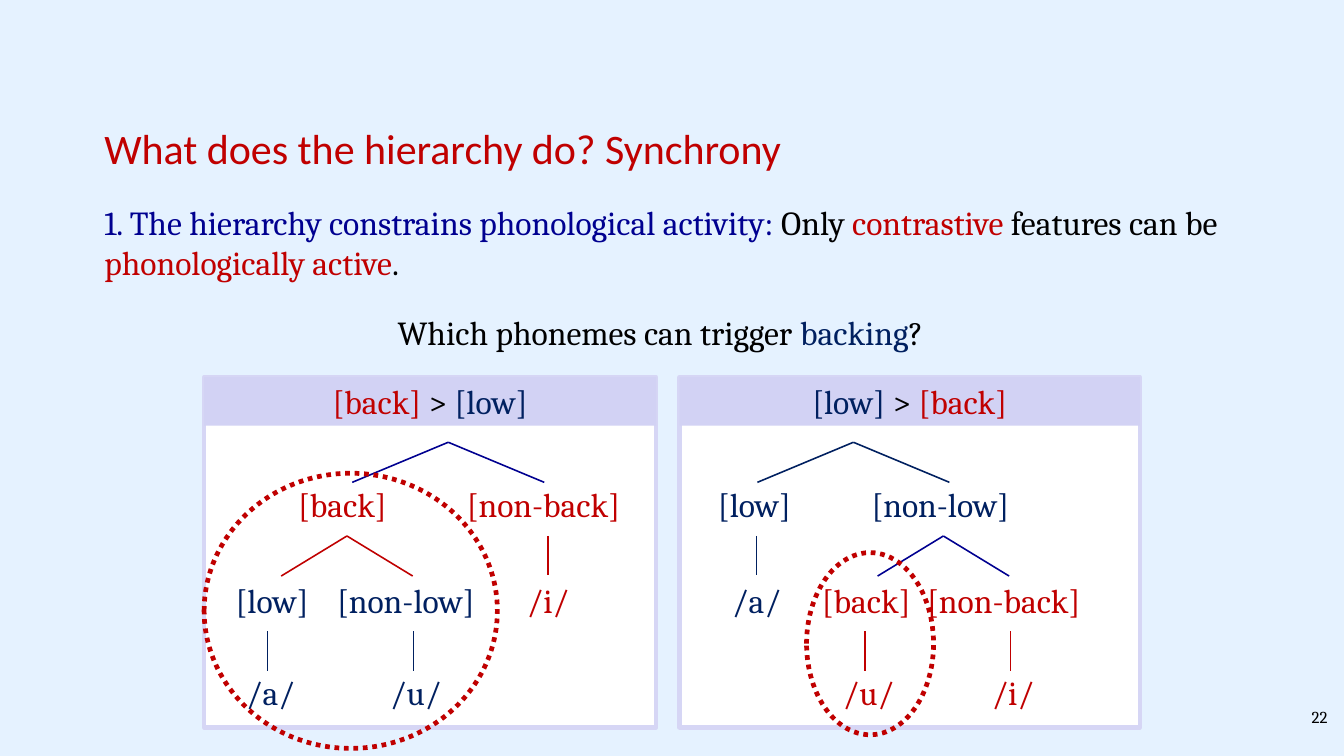
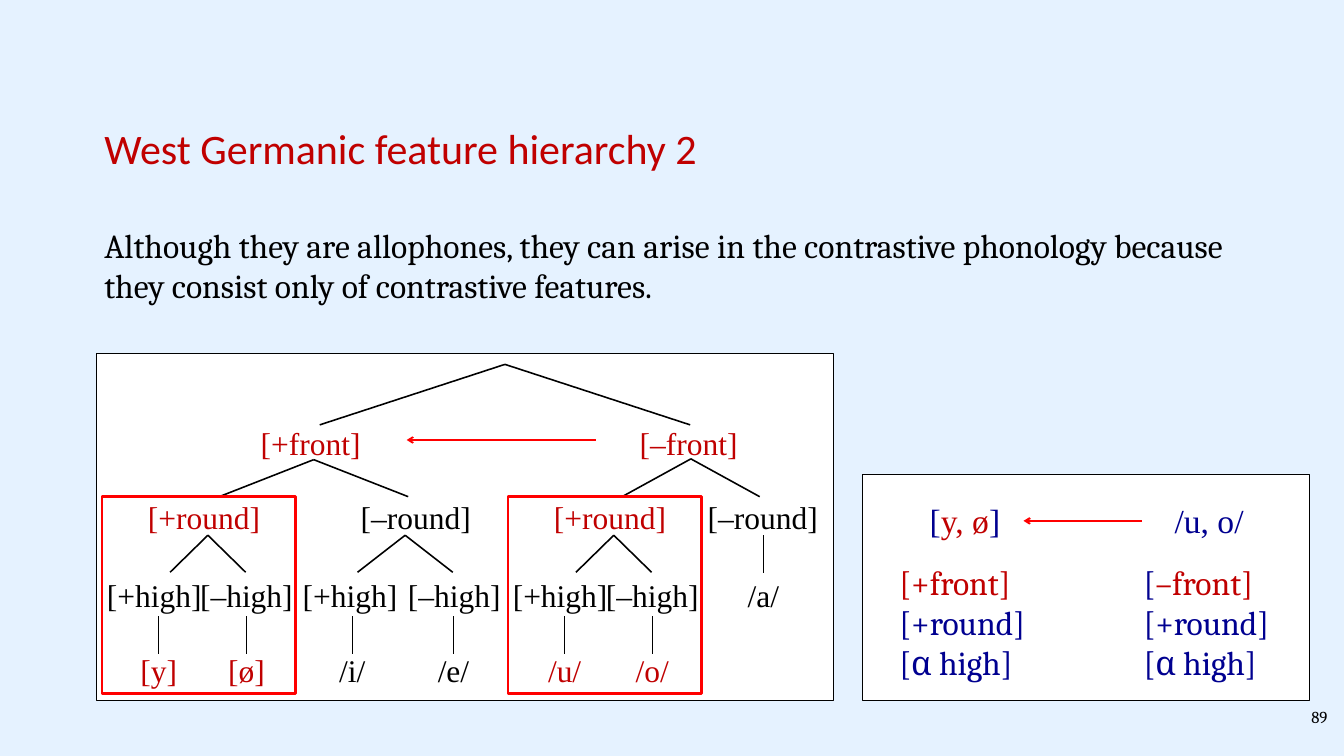
from lxml.etree import SubElement
from pptx import Presentation
from pptx.dml.color import RGBColor
from pptx.enum.dml import MSO_LINE
from pptx.enum.shapes import MSO_CONNECTOR, MSO_SHAPE
from pptx.enum.text import MSO_ANCHOR, MSO_AUTO_SIZE, PP_ALIGN
from pptx.oxml.ns import qn
from pptx.util import Inches, Pt

BACKGROUND, WHITE, BLACK = "E5F2FF", "FFFFFF", "000000"
RED, BRIGHT_RED, BLUE, NAVY = "C00000", "FF0000", "000090", "002060"
BORDER, BAND = "D6D6F5", "D2D2F4"
TITLE_FONT, TEXT_FONT, TREE_FONT = "Calibri", "Cambria", "Times New Roman"

LABEL_WIDTHS = {
    "[back]": 1.42, "[non-back]": 2.33, "[low]": 1.22, "[non-low]": 2.14,
    "[+front]": 1.54, "[–front]": 1.51, "[+round]": 1.7, "[–round]": 1.67,
    "[+high]": 1.47, "[–high]": 1.44,
}
LEAF_WIDTH = 1.0


def color(value):
    return RGBColor.from_string(value)


def write(box, paragraphs, size=32, font=TEXT_FONT, align=PP_ALIGN.LEFT, wrap=True):
    """Fill a shape with paragraphs, each a list of (text, colour) spans."""
    frame = box.text_frame
    frame.auto_size = MSO_AUTO_SIZE.NONE if wrap else MSO_AUTO_SIZE.SHAPE_TO_FIT_TEXT
    frame.word_wrap = wrap
    frame.vertical_anchor = MSO_ANCHOR.TOP
    for number, spans in enumerate(paragraphs):
        para = frame.paragraphs[0] if number == 0 else frame.add_paragraph()
        para.alignment = align
        para.space_before = Pt(0)
        for text, tint in spans:
            span = para.add_run()
            span.text = text
            span.font.size = Pt(size)
            span.font.name = font
            span.font.color.rgb = color(tint)


def place(box, left, top, width, height):
    box.left, box.top = Inches(left), Inches(top)
    box.width, box.height = Inches(width), Inches(height)


def add_text(page, left, top, width, height, paragraphs, **style):
    box = page.shapes.add_textbox(
        Inches(left), Inches(top), Inches(width), Inches(height))
    write(box, paragraphs, **style)


def add_outline(page, left, top, width, height, fill=None, line=None, weight=1.0,
                kind=MSO_SHAPE.RECTANGLE):
    shape = page.shapes.add_shape(
        kind, Inches(left), Inches(top), Inches(width), Inches(height))
    shape.shadow.inherit = False
    if fill:
        shape.fill.solid()
        shape.fill.fore_color.rgb = color(fill)
    else:
        shape.fill.background()
    if line:
        shape.line.color.rgb = color(line)
        shape.line.width = Pt(weight)
    else:
        shape.line.fill.background()
    return shape


def add_line(page, start, end, tint, weight, arrow=False):
    line = page.shapes.add_connector(
        MSO_CONNECTOR.STRAIGHT, *(Inches(length) for length in (*start, *end)))
    line.line.color.rgb = color(tint)
    line.line.width = Pt(weight)
    if arrow:
        SubElement(line.line._get_or_add_ln(), qn("a:tailEnd"), type="arrow")
    SubElement(line._element.spPr, qn("a:effectLst"))


def add_branch(page, apex, top, reach, drop, tint):
    for side in (-1, 1):
        add_line(page, (apex, top), (apex + side * reach, top + drop), tint, 1.5)


def add_label(page, center, top, text, tint, size, font):
    width = LABEL_WIDTHS.get(text, LEAF_WIDTH)
    add_text(page, center - width / 2, top, width, size * 0.02, [[(text, tint)]],
             size=size, font=font, align=PP_ALIGN.CENTER, wrap=False)


def start_page(deck, title, body_top, body, number):
    page = deck.slides.add_slide(deck.slide_layouts[1])
    heading, text = page.shapes.title, page.placeholders[1]
    place(heading, 1.28, 1.57, 9.69, 0.77)
    write(heading, [[(title, RED)]], size=40, font=TITLE_FONT)
    place(text, 1.28, body_top, 15.75, 1.18)
    write(text, [body])
    properties = text.text_frame.paragraphs[0]._p.get_or_add_pPr()
    properties.set("marL", "0")
    properties.set("indent", "0")
    SubElement(properties, qn("a:buNone"))
    add_text(page, 15.58, 9.3, 2.08, 0.5, [[(number, BLACK)]],
             size=16, align=PP_ALIGN.RIGHT)
    return page


def add_ranking_panel(page, left, top, width, heading, branches, labels, leaves, ring):
    """Draw one feature ranking: heading band, tree and dotted ring."""
    label_rows, line_rows = (1.36, 2.63, 3.85), (0.86, 2.1, 3.36)
    add_outline(page, left, top, width, 4.63, WHITE, BORDER, 4.5)
    for apex, row, reach, tint in branches:
        add_branch(page, left + apex, top + line_rows[row], reach, 0.53, tint)
    for text, center, row, tint in labels:
        add_label(page, left + center, top + label_rows[row], text, tint, 32, TEXT_FONT)
    for text, center, stem, row, tint in leaves:
        stem_top = top + line_rows[row]
        add_line(page, (left + stem, stem_top), (left + stem, stem_top + 0.52), tint, 1.5)
        add_label(page, left + center, top + label_rows[row], text, tint, 32, TEXT_FONT)
    band = add_outline(page, left, top, width, 0.64, BAND)
    write(band, [heading], align=PP_ALIGN.CENTER)
    ring_left, ring_top, ring_width, ring_height = ring
    circle = add_outline(page, left + ring_left, top + ring_top, ring_width, ring_height,
                         line=RED, weight=4.5, kind=MSO_SHAPE.OVAL)
    circle.line.dash_style = MSO_LINE.ROUND_DOT


def build_synchrony_page(deck):
    page = start_page(deck, "What does the hierarchy do? Synchrony", 2.62, [
        ("1. The hierarchy constrains phonological activity: ", BLUE), ("Only ", BLACK),
        ("contrastive", RED), (" features can be ", BLACK),
        ("phonologically active", RED), (".", BLACK)], "22")
    add_text(page, 4.38, 4.08, 8.71, 0.64, [[
        ("Which phonemes can trigger ", BLACK), ("backing", NAVY), ("?", BLACK)]],
        align=PP_ALIGN.CENTER)
    add_ranking_panel(
        page, 2.7, 4.99, 5.98,
        heading=[("[back] ", RED), ("> ", BLACK), ("[low]", NAVY)],
        branches=[(3.23, 0, 1.27, BLUE), (1.89, 1, 0.87, RED)],
        labels=[("[back]", 1.83, 0, RED), ("[non-back]", 4.49, 0, RED),
                ("[low]", 0.9, 1, NAVY), ("[non-low]", 2.67, 1, NAVY)],
        leaves=[("/i/", 4.55, 4.55, 1, RED), ("/a/", 0.88, 0.84, 2, NAVY),
                ("/u/", 2.8, 2.77, 2, NAVY)],
        ring=(0, 1.27, 3.88, 3.64))
    add_ranking_panel(
        page, 8.99, 4.99, 6.09,
        heading=[("[low] ", NAVY), ("> ", BLACK), ("[back]", RED)],
        branches=[(2.3, 0, 1.27, NAVY), (3.49, 1, 0.87, BLUE)],
        labels=[("[low]", 0.99, 0, NAVY), ("[non-low]", 3.45, 0, NAVY),
                ("[back]", 2.47, 1, RED), ("[non-back]", 4.29, 1, RED)],
        leaves=[("/a/", 1.02, 1.02, 1, NAVY), ("/u/", 2.5, 2.45, 2, RED),
                ("/i/", 4.41, 4.38, 2, RED)],
        ring=(1.68, 2.32, 1.68, 2.41))


def add_hierarchy_tree(page, left, top):
    front_row, round_row, high_row, vowel_row = 0.89, 1.87, 2.9, 3.89
    round_lines, high_lines = 2.41, 3.48

    def label(text, center, row, tint=BLACK):
        add_label(page, left + center, top + row, text, tint, 30, TREE_FONT)

    def leaf(text, center, row, stem_row, tint=BLACK):
        stem_top = top + stem_row
        add_line(page, (left + center, stem_top), (left + center, stem_top + 0.5),
                 BLACK, 0.75)
        label(text, center, row, tint)

    add_outline(page, left, top, 9.75, 4.6, WHITE, BLACK, 0.75)
    for apex, branch_top, reach, drop in (
            (5.4, 0.15, 2.45, 0.8), (2.87, 1.41, 1.25, 0.49), (7.86, 1.4, 0.91, 0.5),
            (4.08, round_lines, 0.63, 0.49)):
        add_branch(page, left + apex, top + branch_top, reach, drop, BLACK)
    label("[+front]", 2.83, front_row, RED)
    label("[–front]", 7.83, front_row, RED)
    add_line(page, (left + 6.6, top + 1.15), (left + 4.1, top + 1.15),
             BRIGHT_RED, 1.75, arrow=True)

    for frame_left, vowels in ((0.07, ("[y]", "[ø]")), (5.44, ("/u/", "/o/"))):
        add_branch(page, left + frame_left + 1.4, top + round_lines, 0.5, 0.49, BLACK)
        label("[+round]", frame_left + 1.35, round_row, RED)
        for height, center in (("[+high]", 0.69), ("[–high]", 1.91)):
            label(height, frame_left + center, high_row)
        for vowel, center in zip(vowels, (0.75, 1.91)):
            leaf(vowel, frame_left + center, vowel_row, high_lines, RED)
        add_outline(page, left + frame_left, top + 1.9, 2.56, 2.6,
                    line=BRIGHT_RED, weight=2.5)

    label("[–round]", 4.22, round_row)
    label("[–round]", 8.81, round_row)
    label("[+high]", 3.35, high_row)
    label("[–high]", 4.73, high_row)
    leaf("/i/", 3.38, vowel_row, high_lines)
    leaf("/e/", 4.72, vowel_row, high_lines)
    leaf("/a/", 8.82, high_row, round_lines)


def add_fronting_panel(page, left, top):
    add_outline(page, left, top, 5.91, 3, WHITE, BLACK, 0.75)
    columns = (
        (0.79, 0.39, [("[", BLUE), ("y, ø", RED), ("]", BLUE)], [("[+front]", RED)]),
        (4.03, 3.62, [("/u, o/", BLUE)], [("[", BLUE), ("–front]", RED)]),
    )
    for vowel_left, feature_left, vowels, front in columns:
        add_text(page, left + vowel_left, top + 0.3, 1.3, 0.64, [vowels],
                 font=TREE_FONT, wrap=False)
        add_text(page, left + feature_left, top + 1.11, 1.93, 1.72,
                 [front, [("[+round]", BLUE)], [("[α high]", BLUE)]], wrap=False)
    add_line(page, (left + 3.7, top + 0.62), (left + 2.13, top + 0.62),
             BRIGHT_RED, 1.75, arrow=True)


def build_germanic_page(deck):
    page = start_page(deck, "West Germanic feature hierarchy 2", 2.92, [
        ("Although they are allophones, they can arise in the contrastive phonology "
         "because they consist only of contrastive features.", BLACK)], "89")
    add_hierarchy_tree(page, 1.28, 4.67)
    add_fronting_panel(page, 11.41, 6.27)


def main():
    deck = Presentation()
    deck.slide_width, deck.slide_height = Inches(17.78), Inches(10)
    backdrop = deck.slide_master.background.fill
    backdrop.solid()
    backdrop.fore_color.rgb = color(BACKGROUND)
    build_synchrony_page(deck)
    build_germanic_page(deck)
    deck.save("out.pptx")


if __name__ == "__main__":
    main()
